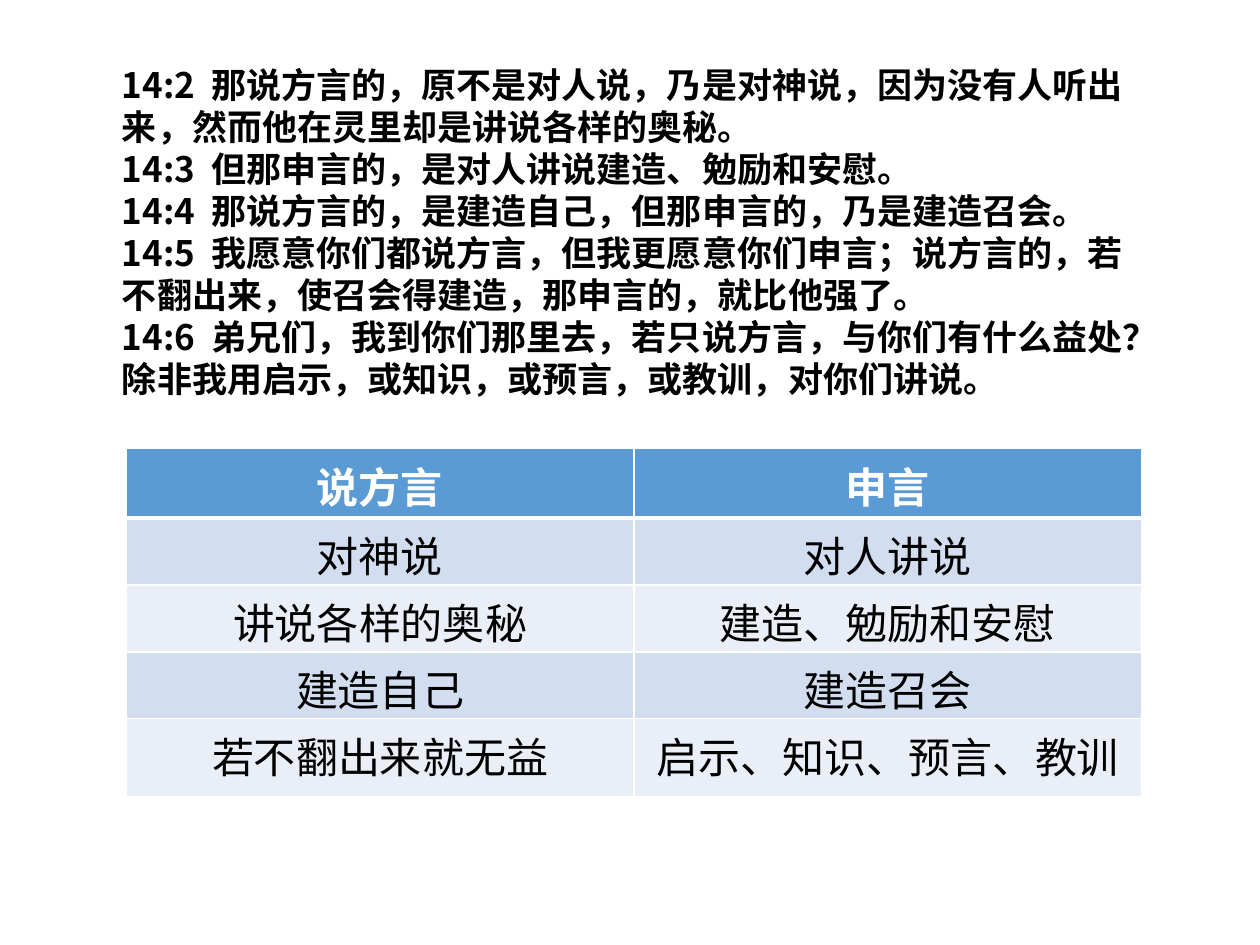
from lxml import etree
from pptx import Presentation
from pptx.dml.color import RGBColor
from pptx.enum.text import PP_ALIGN
from pptx.oxml.ns import qn
from pptx.util import Cm, Pt

CENTER = PP_ALIGN.CENTER
CJK_FONT = "Noto Sans CJK SC"
LATIN_FONT = "Calibri"
COLORS = {"text": "000000", "white": "FFFFFF", "header": "5B9BD5",
          "odd": "D2DEEF", "even": "EAEFF7"}

# Content
VERSES = [
    ("14:2", "那说方言的，原不是对人说，乃是对神说，因为没有人听出来，然而他在灵里却是讲说各样的奥秘。"),
    ("14:3", "但那申言的，是对人讲说建造、勉励和安慰。"),
    ("14:4", "那说方言的，是建造自己，但那申言的，乃是建造召会。"),
    ("14:5", "我愿意你们都说方言，但我更愿意你们申言；说方言的，若不翻出来，使召会得建造，那申言的，就比他强了。"),
    ("14:6", "弟兄们，我到你们那里去，若只说方言，与你们有什么益处？除非我用启示，或知识，或预言，或教训，对你们讲说。"),
]
COMPARISON = [
    ("说方言", "申言"),
    ("对神说", "对人讲说"),
    ("讲说各样的奥秘", "建造、勉励和安慰"),
    ("建造自己", "建造召会"),
    ("若不翻出来就无益", "启示、知识、预言、教训"),
]
ROW_HEIGHTS = [1.4, 1.35, 1.35, 1.35, 1.57]
COLUMN_WIDTH = 10.24
VERSE_INDENT = 1.8
LINE_RATIO = 1.2


def add_text(para, text, size, font, color, bold):
    para.line_spacing = Pt(size * LINE_RATIO)
    span = para.add_run()
    span.text = text
    span.font.size = Pt(size)
    span.font.bold = bold
    span.font.name = font
    span.font.color.rgb = RGBColor.from_string(COLORS[color])
    east_asian = etree.SubElement(span._r.get_or_add_rPr(), qn("a:ea"))
    east_asian.set("typeface", CJK_FONT)


def add_tab_stop(para, position):
    tabs = etree.SubElement(para._p.get_or_add_pPr(), qn("a:tabLst"))
    etree.SubElement(tabs, qn("a:tab"), pos=str(Cm(position)), algn="l")


def set_borders(cell, bottom_width):
    """Draw white borders; they must precede the fill in the cell properties."""
    properties = cell._tc.get_or_add_tcPr()
    widths = {"a:lnL": 1, "a:lnR": 1, "a:lnT": 1, "a:lnB": bottom_width}
    for tag, width in widths.items():
        line = etree.SubElement(properties, qn(tag), w=str(Pt(width)))
        fill = etree.SubElement(line, qn("a:solidFill"))
        etree.SubElement(fill, qn("a:srgbClr"), val=COLORS["white"])


deck = Presentation()
deck.slide_width, deck.slide_height = Cm(25.4), Cm(19.05)
page = deck.slides.add_slide(deck.slide_layouts[6])

# Verses
box = page.shapes.add_textbox(Cm(2.21), Cm(1.16), Cm(21), Cm(7.09))
frame = box.text_frame
frame.word_wrap = True
for index, (number, verse) in enumerate(VERSES):
    para = frame.add_paragraph() if index else frame.paragraphs[0]
    add_tab_stop(para, VERSE_INDENT)
    add_text(para, f"{number}\t{verse}", 20, CJK_FONT, "text", True)

# Comparison table
table = page.shapes.add_table(
    len(COMPARISON), 2, Cm(2.54), Cm(9.04),
    Cm(2 * COLUMN_WIDTH), Cm(sum(ROW_HEIGHTS))).table
for column in table.columns:
    column.width = Cm(COLUMN_WIDTH)
for row_index, (height, labels) in enumerate(zip(ROW_HEIGHTS, COMPARISON)):
    table.rows[row_index].height = Cm(height)
    header = row_index == 0
    fill = "header" if header else "odd" if row_index % 2 else "even"
    for column_index, label in enumerate(labels):
        cell = table.cell(row_index, column_index)
        cell.margin_top, cell.margin_bottom = Cm(0.33), Cm(0)
        set_borders(cell, 3 if header else 1)
        cell.fill.solid()
        cell.fill.fore_color.rgb = RGBColor.from_string(COLORS[fill])
        para = cell.text_frame.paragraphs[0]
        para.alignment = CENTER
        add_text(para, label, 24, CJK_FONT if header else LATIN_FONT,
                 "white" if header else "text", header)

deck.save("out.pptx")
